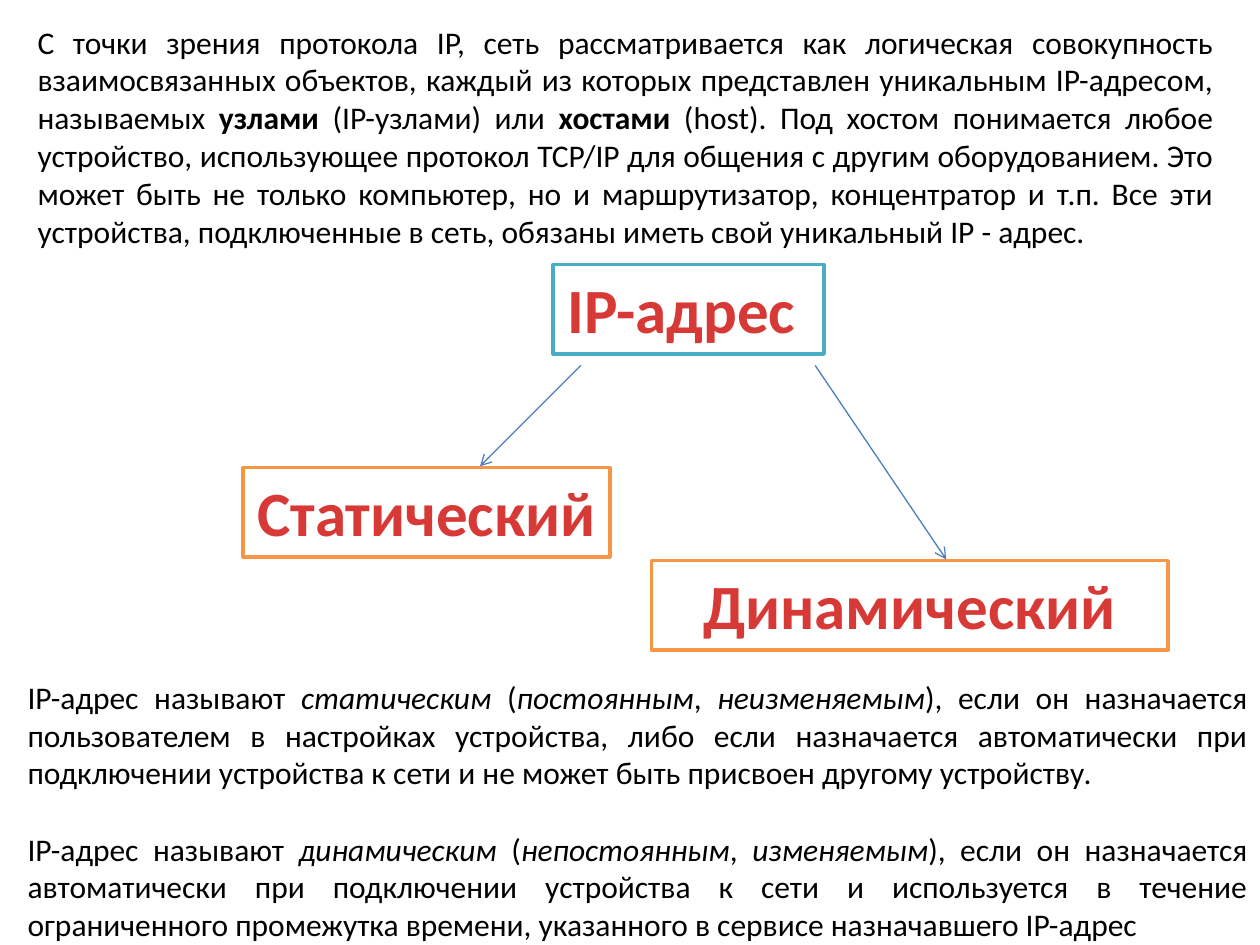
from lxml.etree import SubElement
from pptx import Presentation
from pptx.dml.color import RGBColor
from pptx.enum.shapes import MSO_CONNECTOR as Connector, MSO_SHAPE as Shape
from pptx.enum.text import MSO_ANCHOR as Anchor, PP_ALIGN as Align
from pptx.oxml.ns import qn
from pptx.util import Inches, Pt

COLUMNS, ROWS = 100, 75
CELL = Inches(10) // COLUMNS
NODE_HEIGHT = 7.1

INTRO = [[
    ("С точки зрения протокола IP, сеть рассматривается как логическая совокупность "
     "взаимосвязанных объектов, каждый из которых представлен уникальным IP-адресом, "
     "называемых ", {}),
    ("узлами", {"bold": True}),
    (" (IP-узлами) или ", {}),
    ("хостами", {"bold": True}),
    (" (host). Под хостом понимается любое устройство, использующее протокол TCP/IP "
     "для общения с другим оборудованием. Это может быть не только компьютер, но и "
     "маршрутизатор, концентратор и т.п. Все эти устройства, подключенные в сеть, "
     "обязаны иметь свой уникальный IP - адрес.", {}),
]]


def color(value):
    return RGBColor.from_string(value)


def cells(*counts):
    return [round(count * CELL) for count in counts]


def definition(term, first_synonym, second_synonym, ending):
    italic = {"italic": True}
    return [
        ("IP-адрес называют ", {}), (term, italic),
        (" (", {}), (first_synonym, italic),
        (", ", {}), (second_synonym, italic),
        ("), если он назначается " + ending, {}),
    ]


DEFINITIONS = [
    definition("статическим", "постоянным", "неизменяемым",
               "пользователем в настройках устройства, либо если назначается автоматически "
               "при подключении устройства к сети и не может быть присвоен другому устройству."),
    definition("динамическим", "непостоянным", "изменяемым",
               "автоматически при подключении устройства к сети и используется в течение "
               "ограниченного промежутка времени, указанного в сервисе назначавшего IP-адрес"),
]


def add_run(paragraph, text, size, text_color, styles):
    run = paragraph.add_run()
    run.text = text
    run.font.color.rgb = color(text_color)
    for name, value in {"name": "Calibri", "size": Pt(size), **styles}.items():
        setattr(run.font, name, value)


def add_body(slide, box, paragraphs):
    frame = slide.shapes.add_textbox(*cells(*box)).text_frame
    frame.word_wrap = True
    for index, runs in enumerate(paragraphs):
        paragraph = frame.add_paragraph() if index else frame.paragraphs[0]
        paragraph.alignment = Align.JUSTIFY
        paragraph.space_before = Pt(22 if index else 0)
        for text, styles in runs:
            add_run(paragraph, text, 18, "000000", styles)


def add_node(group, box, text, line_color, wrap):
    node = group.shapes.add_shape(Shape.RECTANGLE, *cells(*box))
    node.shadow.inherit = False
    node.fill.solid()
    node.fill.fore_color.rgb = color("FFFFFF")
    node.line.color.rgb = color(line_color)
    node.line.width = Pt(2)
    frame = node.text_frame
    frame.word_wrap = wrap
    frame.vertical_anchor = Anchor.TOP
    frame.paragraphs[0].alignment = Align.CENTER
    add_run(frame.paragraphs[0], text, 36, "D73A36", {"bold": True})


def add_arrow(group, start, end):
    arrow = group.shapes.add_connector(Connector.STRAIGHT, *cells(*start, *end))
    arrow.line.color.rgb = color("4B7EBC")
    arrow.line.width = Pt(0.75)
    SubElement(arrow.line._get_or_add_ln(), qn("a:tailEnd"), type="arrow")
    SubElement(arrow._element.spPr, qn("a:effectLst"))


def add_diagram(slide, left, top):
    group = slide.shapes.add_group_shape()
    nodes = [
        ("IP-адрес ", 24.6, 0, 21.5, "4BACC6", False),
        ("Динамический", 32.4, 23.5, 41, "F79646", True),
        ("Статический", 0, 16.1, 29.1, "F79646", False),
    ]
    for text, column, row, width, line_color, wrap in nodes:
        box = (left + column, top + row, width, NODE_HEIGHT)
        add_node(group, box, text, line_color, wrap)
    for start_column, end_column, end_row in [(26.8, 18.8, 16), (45.4, 55.8, 23.4)]:
        add_arrow(group, (left + start_column, top + 8), (left + end_column, top + end_row))


def main():
    presentation = Presentation()
    presentation.slide_width = COLUMNS * CELL
    presentation.slide_height = ROWS * CELL
    slide = presentation.slides.add_slide(presentation.slide_layouts[6])
    add_diagram(slide, 19.3, 21)
    add_body(slide, (2, 1.3, 95.3, 22.2), INTRO)
    add_body(slide, (1.2, 53.3, 98.8, 22.2), DEFINITIONS)
    presentation.save("out.pptx")


if __name__ == "__main__":
    main()
